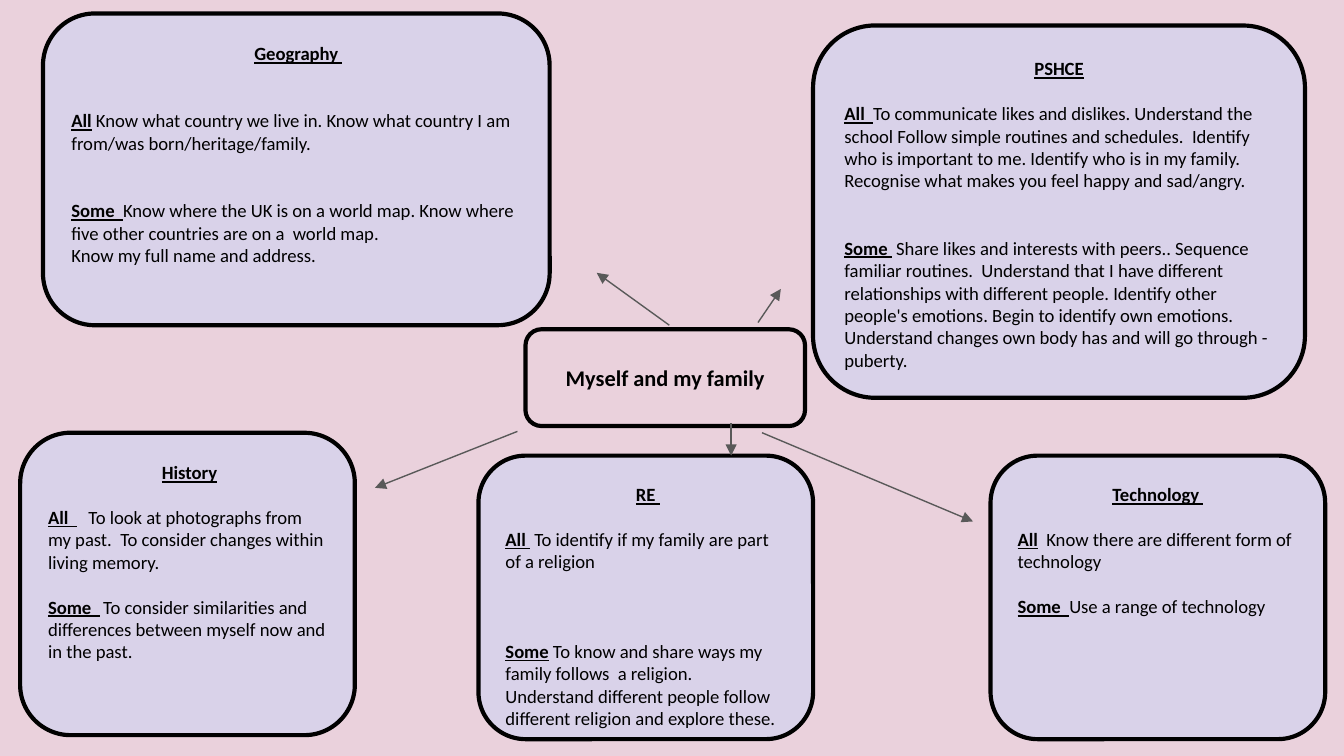
from dataclasses import dataclass
from typing import Optional

import pptx
import pptx.dml.color
import pptx.enum.shapes
import pptx.enum.text
import pptx.oxml
import pptx.oxml.ns
import pptx.util
from pptx.enum.text import MSO_ANCHOR, PP_ALIGN

PX = 9144  # 100 px to the inch
LINE_PT = 12  # height of one line of 10 pt text
FONT = "Calibri"
COLORS = {
    "background": "EAD1DC",
    "topic": "D9D2E9",
    "outline": "000000",
    "text": "000000",
    "arrow": "595959",
}


@dataclass
class Point:
    label: str
    text: str
    gap: int = 1  # lines left free above
    tab: Optional[int] = None  # px from the text edge to the tab stop


@dataclass
class Box:
    title: str
    left: int
    top: int
    width: int
    height: int
    points: tuple[Point, ...] = ()
    fill: str = "topic"
    size: int = 10
    underline: bool = True
    anchor: MSO_ANCHOR = MSO_ANCHOR.TOP


@dataclass
class Arrow:
    x1: int
    y1: int
    x2: int
    y2: int


BOXES = [
    Box("Myself and my family", 391, 245, 208, 72, fill="background",
        size=12, underline=False, anchor=MSO_ANCHOR.MIDDLE),
    Box("Technology ", 737, 339, 249, 211, (
        Point("All", "  Know there are different form of technology"),
        Point("Some  ", "Use a range of technology"),
    )),
    Box(" History", 15, 322, 249, 225, (
        Point("All  \t", "To look at photographs from my past.  To consider "
              "changes within living memory.", tab=30),
        Point("Some  \t", "To consider similarities and differences between "
              "myself now and in the past.", tab=41),
    )),
    Box("PSHCE", 605, 19, 366, 277, (
        Point("All  ", "To communicate likes and dislikes. Understand the school "
              "Follow simple routines and schedules.  Identify who is important "
              "to me. Identify who is in my family.  Recognise what makes you "
              "feel happy and sad/angry."),
        Point("Some ", " Share likes and interests with peers.. Sequence familiar "
              "routines.  Understand that I have different relationships with "
              "different people. Identify other people's emotions. Begin to "
              "identify own emotions. Understand changes own body has and will "
              "go through - puberty.", gap=2),
    )),
    Box(" RE ", 356, 339, 249, 211, (
        Point("All ", " To identify if my family are part of a religion"),
        Point("Some", " To know and share ways my family follows  a religion.  "
              "Understand different people follow different religion and "
              "explore these.", gap=3),
    )),
    Box(" Geography ", 32, 10, 377, 232, (
        Point("All", " Know what country we live in. Know what country I am "
              "from/was born/heritage/family.", gap=2),
        Point("Some  ", "Know where the UK is on a world map. Know where five "
              "other countries are on a  world map.", gap=2),
        Point("", "Know my full name and address.", gap=0),
    )),
]

ARROWS = [
    Arrow(567, 322, 724, 388),
    Arrow(564, 240, 581, 215),
    Arrow(385, 321, 279, 363),
    Arrow(498, 242, 444, 203),
    Arrow(544, 315, 544, 339),
]


def px(n: int) -> pptx.util.Emu:
    return pptx.util.Emu(n * PX)


def rgb(name: str) -> pptx.dml.color.RGBColor:
    return pptx.dml.color.RGBColor.from_string(COLORS[name])


def add_run(p, text: str, size: int, bold: bool = False, underline: bool = False) -> None:
    r = p.add_run()
    r.text = text
    r.font.name = FONT
    r.font.size = pptx.util.Pt(size)
    r.font.bold = bold
    r.font.underline = underline
    r.font.color.rgb = rgb("text")


def add_title(p, box: Box) -> None:
    """Write the heading, keeping a leading space free of underline."""
    p.alignment = PP_ALIGN.CENTER
    heading = box.title.lstrip()
    if heading != box.title:
        add_run(p, " ", box.size)
    add_run(p, heading, box.size, bold=True, underline=box.underline)


def add_tab_stop(p, position: int) -> None:
    tabs = pptx.oxml.parse_xml(
        f'<a:tabLst {pptx.oxml.ns.nsdecls("a")}>'
        f'<a:tab pos="{px(position)}" algn="l"/></a:tabLst>')
    p._p.get_or_add_pPr().append(tabs)


def add_point(tf, point: Point, size: int) -> None:
    p = tf.add_paragraph()
    p.alignment = PP_ALIGN.LEFT
    p.space_before = pptx.util.Pt(point.gap * LINE_PT)
    if point.tab is not None:
        add_tab_stop(p, point.tab)
    if point.label:
        add_run(p, point.label, size, bold=True, underline=True)
    add_run(p, point.text, size)


def add_box(s, box: Box) -> None:
    sp = s.shapes.add_shape(
        pptx.enum.shapes.MSO_SHAPE.ROUNDED_RECTANGLE,
        px(box.left), px(box.top), px(box.width), px(box.height))
    sp.shadow.inherit = False
    sp.fill.solid()
    sp.fill.fore_color.rgb = rgb(box.fill)
    sp.line.color.rgb = rgb("outline")
    sp.line.width = pptx.util.Pt(2.25)

    tf = sp.text_frame
    tf.word_wrap = True
    tf.vertical_anchor = box.anchor
    tf.margin_left = tf.margin_right = tf.margin_top = tf.margin_bottom = px(10)
    add_title(tf.paragraphs[0], box)
    for point in box.points:
        add_point(tf, point, box.size)


def add_arrow(s, arrow: Arrow) -> None:
    c = s.shapes.add_connector(
        pptx.enum.shapes.MSO_CONNECTOR.STRAIGHT,
        px(arrow.x1), px(arrow.y1), px(arrow.x2), px(arrow.y2))
    c.line.color.rgb = rgb("arrow")
    c.line.width = pptx.util.Pt(0.75)
    ns = pptx.oxml.ns.nsdecls("a")
    c.line._get_or_add_ln().append(
        pptx.oxml.parse_xml(f'<a:tailEnd {ns} type="triangle" w="med" len="med"/>'))
    c._element.spPr.append(pptx.oxml.parse_xml(f"<a:effectLst {ns}/>"))


def main() -> None:
    prs = pptx.Presentation()
    prs.slide_width = px(1000)
    prs.slide_height = pptx.util.Emu(prs.slide_width * 9 // 16)
    s = prs.slides.add_slide(prs.slide_layouts[6])
    s.background.fill.solid()
    s.background.fill.fore_color.rgb = rgb("background")
    for box in BOXES:
        add_box(s, box)
    for arrow in ARROWS:
        add_arrow(s, arrow)
    prs.save("out.pptx")


if __name__ == "__main__":
    main()
